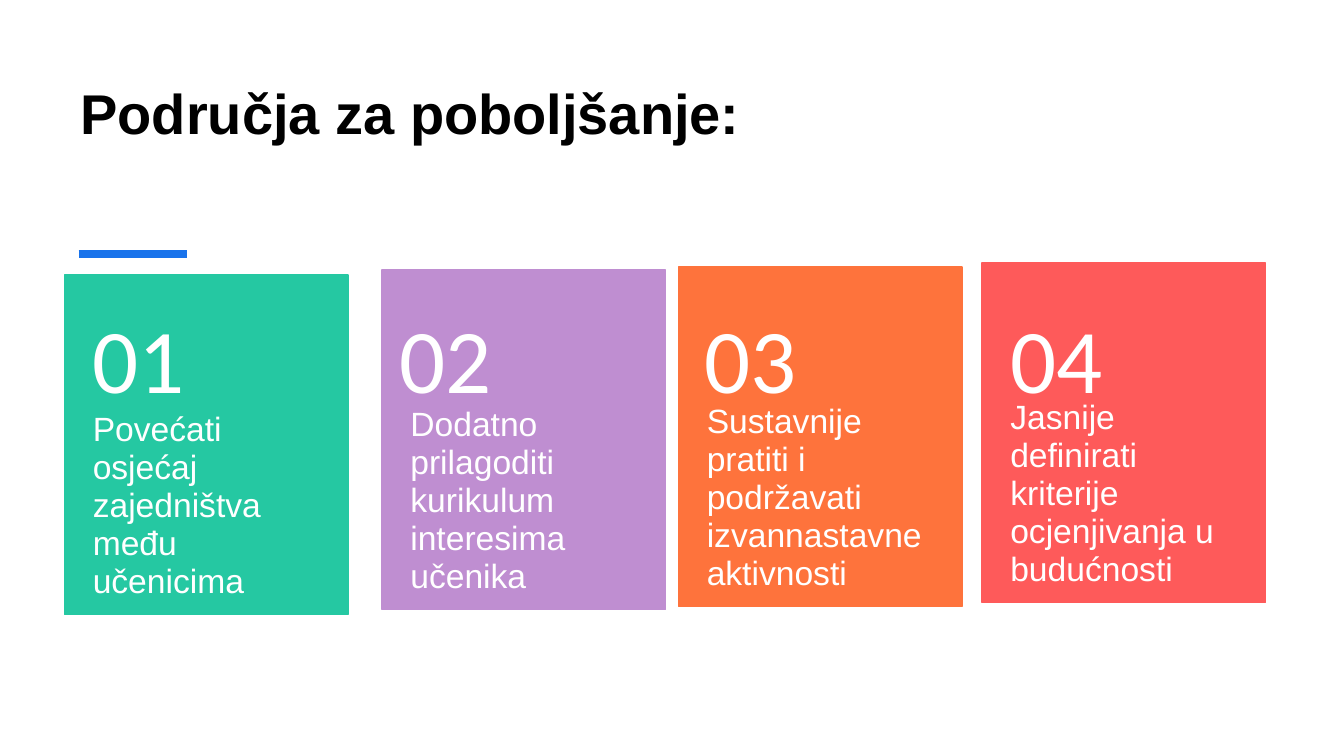
"""Build a slide with four numbered areas for improvement."""
from lxml import etree
from pptx import Presentation
from pptx.dml.color import RGBColor
from pptx.enum.shapes import MSO_CONNECTOR, MSO_SHAPE
from pptx.enum.text import MSO_ANCHOR
from pptx.oxml.ns import qn
from pptx.util import Inches, Pt

TOP, MIDDLE, BOTTOM = MSO_ANCHOR.TOP, MSO_ANCHOR.MIDDLE, MSO_ANCHOR.BOTTOM
RECT, STRAIGHT = MSO_SHAPE.RECTANGLE, MSO_CONNECTOR.STRAIGHT
CARD_W, CARD_H = 2.81, 3.37
BODY_DROP, BODY_H = 1.35, 2.02
NUMBER_Y, NUMBER_H = 2.94, 1.35


def rgb(value):
    return RGBColor.from_string(value)


def add_text(box, text, insets, anchor, spacing, font):
    tf = s.shapes.add_textbox(*map(Inches, box)).text_frame
    tf.word_wrap = True
    tf.vertical_anchor = anchor
    for side, inset in zip(("left", "top", "right", "bottom"), insets):
        setattr(tf, f"margin_{side}", Inches(inset))
    p = tf.paragraphs[0]
    p.line_spacing = spacing
    r = p.add_run()
    r.text = text
    for name, value in font.items():
        setattr(r.font, name, value)
    r.font.color.rgb = rgb("000000" if font.get("bold") else "FFFFFF")


prs = Presentation()
prs.slide_width, prs.slide_height = Inches(13.33), Inches(7.5)
s = prs.slides.add_slide(prs.slide_layouts[6])

title_font = {"name": "Arial", "size": Pt(40), "bold": True}
body_font = {"name": "Arial", "size": Pt(24)}
number_font = {"name": "Calibri", "size": Pt(65)}

add_text((0.7, 0.62, 11.91, 1.52), "Područja za poboljšanje:",
         (0.1, 0.05, 0.1, 0.69), BOTTOM, 1.0, title_font)

accent = s.shapes.add_connector(
    STRAIGHT, Inches(0.78), Inches(2.52), Inches(1.85), Inches(2.52))
accent.line.color.rgb = rgb("1973EB")
accent.line.width = Pt(6)
etree.SubElement(accent._element.spPr, qn("a:effectLst"))

cards = [
    (0.64, 2.73, 0.64, "25C8A2", "Povećati osjećaj zajedništva među učenicima"),
    (3.79, 2.68, 3.68, "BF8ED1", "Dodatno prilagoditi kurikulum interesima učenika"),
    (6.73, 2.65, 6.71, "FE733C", "Sustavnije pratiti i podržavati izvannastavne aktivnosti"),
    (9.74, 2.61, 9.74, "FE5A5A", "Jasnije definirati kriterije ocjenjivanja u budućnosti"),
]
for i, (x, y, number_x, color, text) in enumerate(cards, 1):
    sp = s.shapes.add_shape(RECT, Inches(x), Inches(y), Inches(CARD_W), Inches(CARD_H))
    sp.shadow.inherit = False
    sp.fill.solid()
    sp.fill.fore_color.rgb = rgb(color)
    sp.line.color.rgb = rgb(color)
    sp.line.width = Pt(1)
    add_text((x, y + BODY_DROP, CARD_W, BODY_H), text,
             (0.28, 0, 0.28, 0.36), TOP, 0.94, body_font)
    add_text((number_x, NUMBER_Y, CARD_W, NUMBER_H), f"{i:02}",
             (0.28, 0.18, 0.28, 0.18), MIDDLE, 0.9, number_font)

prs.save("out.pptx")
